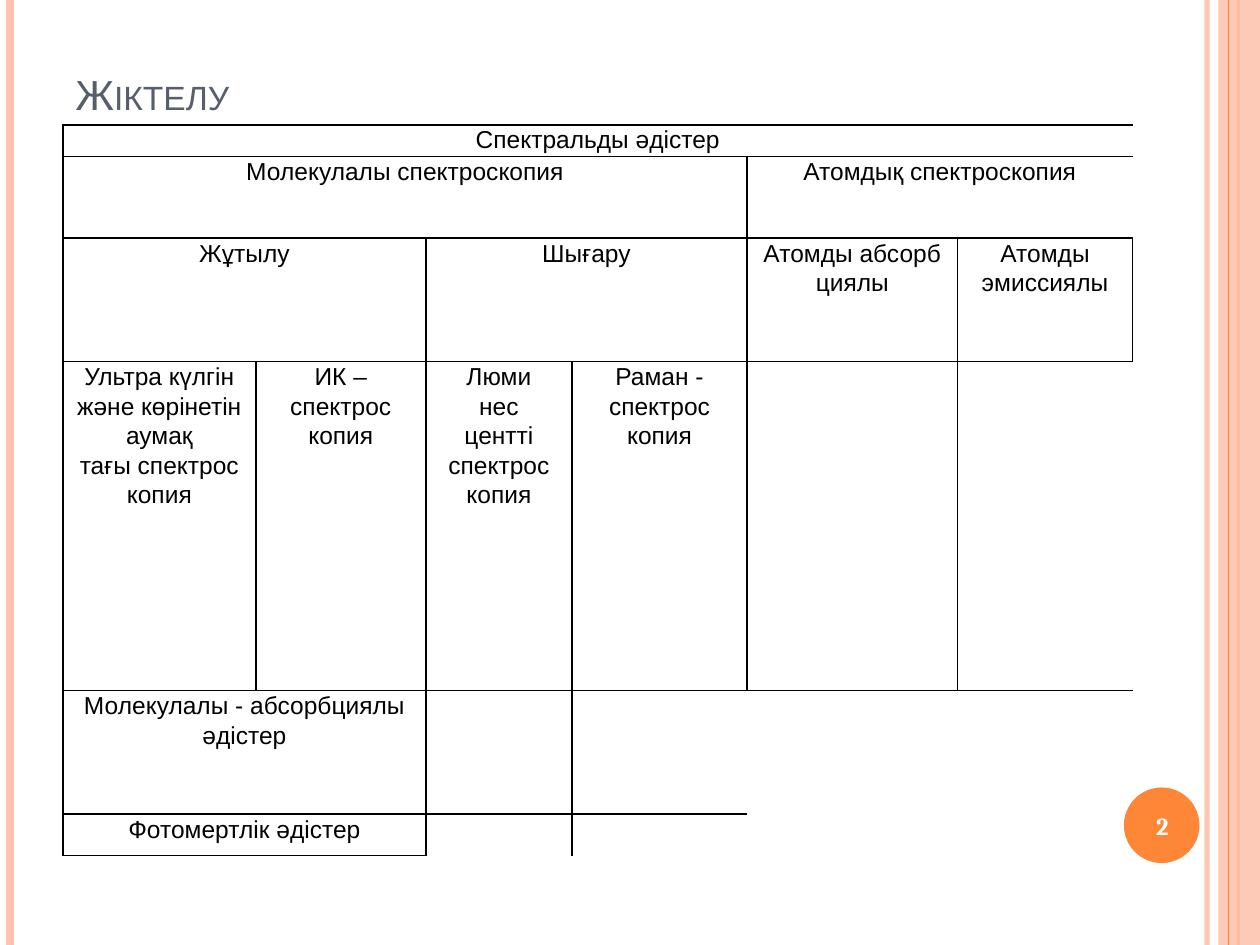
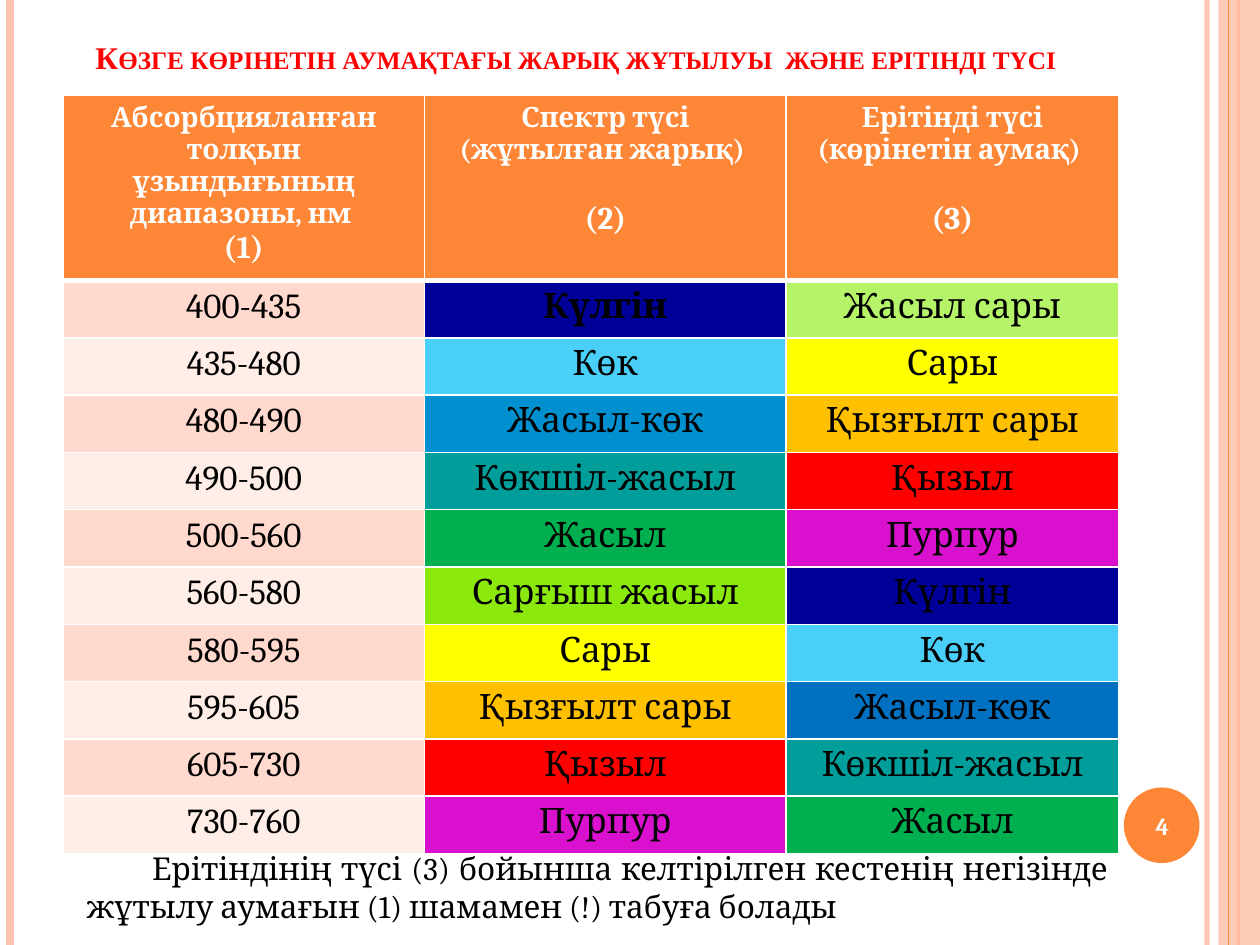
from dataclasses import dataclass
from typing import Any, NamedTuple, Optional

from lxml.etree import SubElement
from pptx import Presentation
from pptx.dml.color import RGBColor
from pptx.enum.shapes import MSO_CONNECTOR as Connector, MSO_SHAPE as Shape
from pptx.enum.text import MSO_ANCHOR as Anchor, PP_ALIGN as Align
from pptx.oxml.ns import qn
from pptx.util import Inches, Pt


# Theme
@dataclass(frozen=True)
class Theme:
    accent: str = "FE8637"
    stripe: str = "FEC3AE"
    slate: str = "575F6D"
    red: str = "FF0000"
    black: str = "000000"
    white: str = "FFFFFF"
    bands: tuple[str, str] = ("FFD9CE", "FFEDE8")
    sans: str = "Arial"
    serif: str = "Cambria"
    roman: str = "Times New Roman"
    small: int = 14
    header: int = 16
    body: int = 18
    value: int = 20
    heading: int = 24


THEME = Theme()
NO_TABLE_STYLE = "{2D5ABB26-0587-4C30-8999-92F81FD0307C}"


class Style(NamedTuple):
    font: str
    size: int
    color: str
    bold: bool = False
    small_caps: bool = False


class Box(NamedTuple):
    left: float
    top: float
    width: float
    height: float

    def lengths(self) -> list[int]:
        return [Inches(value) for value in self]


class Rule(NamedTuple):
    x: float
    color: str
    width: float
    opacity: int = 100


class Line(NamedTuple):
    text: str
    style: Style
    format: dict[str, Any] = {}


@dataclass
class Cell:
    row: int
    column: int
    lines: list[Line]
    span: int = 1
    fill: Optional[str] = None
    bottom_width: float = 1


@dataclass
class Grid:
    box: Box
    columns: list[float]
    rows: list[float]
    cells: list[Cell]
    border: str
    cell_format: dict[str, Any]


LEFT_RULES = [
    Rule(9.58, THEME.stripe, 3, 93),
    Rule(0.08, THEME.stripe, 4.5),
    Rule(9.83, THEME.accent, 1.5),
]
TOP_RULE = Rule(9.75, THEME.accent, 0.75)
NUMBER = Style(THEME.serif, THEME.small, THEME.white, bold=True)


# Drawing helpers
def set_all(target: Any, values: dict[str, Any]) -> None:
    for name, value in values.items():
        setattr(target, name, value)


def set_opacity(element: Any, percent: int) -> None:
    color = next(element.iter(qn("a:srgbClr")))
    SubElement(color, qn("a:alpha"), val=str(percent * 1000))


def write_lines(frame: Any, lines: list[Line]) -> None:
    for index, line in enumerate(lines):
        paragraph = frame.add_paragraph() if index else frame.paragraphs[0]
        set_all(paragraph, line.format)
        run = paragraph.add_run()
        run.text = line.text
        style = line.style
        set_all(run.font, {"name": style.font, "size": Pt(style.size), "bold": style.bold})
        run.font.color.rgb = RGBColor.from_string(style.color)
        if style.small_caps:
            run.font._element.set("cap", "small")


def add_text(slide: Any, box: Box, line: Line, anchor: Any = Anchor.TOP) -> Any:
    frame = slide.shapes.add_textbox(*box.lengths()).text_frame
    set_all(frame, {"word_wrap": True, "vertical_anchor": anchor})
    write_lines(frame, [line])
    return frame


def add_rule(slide: Any, rule: Rule) -> None:
    x = Inches(rule.x)
    connector = slide.shapes.add_connector(Connector.STRAIGHT, x, 0, x, Inches(7.5))
    connector.line.color.rgb = RGBColor.from_string(rule.color)
    connector.line.width = Pt(rule.width)
    properties = connector._element.spPr
    if rule.opacity < 100:
        set_opacity(properties, rule.opacity)
    SubElement(properties, qn("a:effectLst"))


def add_filled(slide: Any, kind: Any, box: Box, color: str) -> Any:
    shape = slide.shapes.add_shape(kind, *box.lengths())
    shape.shadow.inherit = False
    shape.fill.solid()
    shape.fill.fore_color.rgb = RGBColor.from_string(color)
    shape.line.fill.background()
    return shape


def add_border(cell: Any, side: str, color: str, width: float) -> None:
    properties = cell._tc.get_or_add_tcPr()
    line = SubElement(properties, qn(f"a:ln{side}"), w=str(Pt(width)))
    SubElement(SubElement(line, qn("a:solidFill")), qn("a:srgbClr"), val=color)


def add_grid(slide: Any, grid: Grid) -> None:
    frame = slide.shapes.add_table(len(grid.rows), len(grid.columns), *grid.box.lengths())
    table = frame.table
    set_all(table, {"first_row": False, "horz_banding": False})
    table._tbl.tblPr.find(qn("a:tableStyleId")).text = NO_TABLE_STYLE
    for column, width in zip(table.columns, grid.columns):
        column.width = Inches(width)
    for row, height in zip(table.rows, grid.rows):
        row.height = Inches(height)

    owners = {
        (cell.row, cell.column + offset): cell
        for cell in grid.cells
        for offset in range(cell.span)
    }
    # A border runs wherever two neighbouring places belong to different cells
    steps = {"L": (0, -1), "R": (0, 1), "T": (-1, 0), "B": (1, 0)}
    for row in range(len(grid.rows)):
        for column in range(len(grid.columns)):
            place = table.cell(row, column)
            set_all(place, grid.cell_format)
            owner = owners.get((row, column))
            for side, (down, right) in steps.items():
                if owner is not owners.get((row + down, column + right)):
                    width = owner.bottom_width if owner and side == "B" else 1
                    add_border(place, side, grid.border, width)
            if owner and owner.fill:
                place.fill.solid()
                place.fill.fore_color.rgb = RGBColor.from_string(owner.fill)
            else:
                place.fill.background()

    for cell in grid.cells:
        place = table.cell(cell.row, cell.column)
        if cell.span > 1:
            place.merge(table.cell(cell.row, cell.column + cell.span - 1))
        write_lines(place.text_frame, cell.lines)


# Side bands and number badge
def add_frame(slide: Any) -> None:
    for rule in LEFT_RULES:
        add_rule(slide, rule)
    band = add_filled(slide, Shape.RECTANGLE, Box(9.67, 0, 0.33, 7.5), THEME.stripe)
    set_opacity(band._element.spPr, 87)
    add_rule(slide, TOP_RULE)
    add_filled(slide, Shape.OVAL, Box(8.92, 6.25, 0.6, 0.6), THEME.accent)


def add_page(presentation: Any, title: str, box: Box, style: Style, grid: Grid, number: int) -> Any:
    slide = presentation.slides.add_slide(presentation.slide_layouts[6])
    add_frame(slide)
    add_text(slide, box, Line(title, style), Anchor.BOTTOM)
    add_grid(slide, grid)
    badge = Line(str(number), NUMBER, {"alignment": Align.CENTER})
    add_text(slide, Box(8.89, 6.27, 0.67, 0.57), badge, Anchor.MIDDLE)
    return slide


# Classification tree: row, column, span, lines
METHODS = [
    (0, 0, 6, ["Спектральды әдістер"]),
    (1, 0, 4, ["Молекулалы спектроскопия"]),
    (1, 4, 2, ["Атомдық спектроскопия"]),
    (2, 0, 2, ["Жұтылу"]),
    (2, 2, 2, ["Шығару"]),
    (2, 4, 1, ["Атомды абсорб", "циялы"]),
    (2, 5, 1, ["Атомды эмиссиялы"]),
    (3, 0, 1, ["Ультра күлгін және көрінетін аумақ", "тағы спектрос", "копия"]),
    (3, 1, 1, ["ИК – спектрос", "копия"]),
    (3, 2, 1, ["Люми", "нес", "центті", "спектрос", "копия"]),
    (3, 3, 1, ["Раман - спектрос", "копия"]),
    (4, 0, 2, ["Молекулалы - абсорбциялы әдістер"]),
    (5, 0, 2, ["Фотомертлік әдістер"]),
]


def methods_grid() -> Grid:
    style = Style(THEME.sans, THEME.small, THEME.black)
    centred = {"alignment": Align.CENTER, "line_spacing": 1.07}
    cells = [
        Cell(row, column, [Line(text, style, centred) for text in texts], span)
        for row, column, span, texts in METHODS
    ]
    margins = {"margin_left": Inches(0.07), "margin_right": Inches(0.07),
               "margin_top": 0, "margin_bottom": 0}
    return Grid(Box(0.5, 0.99, 8.5, 5.81), [1.53, 1.35, 1.16, 1.39, 1.67, 1.39],
                [0.25, 0.65, 0.98, 2.61, 0.98, 0.33], cells, THEME.black, margins)


# Absorbed light and solution colour: heading, mark, gap before the mark
HEADERS = [
    ("Абсорбцияланған толқын ұзындығының диапазоны, нм ", "(1)", 0),
    ("Спектр түсі (жұтылған жарық) ", "(2)", 20),
    ("Ерітінді түсі (көрінетін аумақ) ", "(3)", 20),
]
SPECTRUM = [
    ("400-435", ("Күлгін", "000099"), ("Жасыл сары", "B5F369")),
    ("435-480", ("Көк", "4ACFF8"), ("Сары", "FFFF00")),
    ("480-490", ("Жасыл-көк", "0090D0"), ("Қызғылт сары", "FFC000")),
    ("490-500", ("Көкшіл-жасыл", "009E9A"), ("Қызыл", "FF0000")),
    ("500-560", ("Жасыл", "00B050"), ("Пурпур", "D911CF")),
    ("560-580", ("Сарғыш жасыл", "8BE90D"), ("Күлгін", "000099")),
    ("580-595", ("Сары", "FFFF00"), ("Көк", "4ACFF8")),
    ("595-605", ("Қызғылт сары", "FFC000"), ("Жасыл-көк", "0070C0")),
    ("605-730", ("Қызыл", "FF0000"), ("Көкшіл-жасыл", "009E9A")),
    ("730-760", ("Пурпур", "D911CF"), ("Жасыл", "00B050")),
]


def spectrum_grid() -> Grid:
    heading = Style(THEME.serif, THEME.header, THEME.white, bold=True)
    mark = heading._replace(size=THEME.body)
    value = Style(THEME.serif, THEME.value, THEME.black)
    centred = {"alignment": Align.CENTER}
    cells = [
        Cell(0, column, [Line(text, heading, centred),
                         Line(label, mark, {**centred, "space_before": Pt(gap)})],
             fill=THEME.accent, bottom_width=3)
        for column, (text, label, gap) in enumerate(HEADERS)
    ]
    for row, (wavelength, absorbed, visible) in enumerate(SPECTRUM, start=1):
        band = THEME.bands[(row - 1) % 2]
        for column, (text, fill) in enumerate([(wavelength, band), absorbed, visible]):
            style = value._replace(bold=(row, column) == (1, 1))
            cells.append(Cell(row, column, [Line(text, style, centred)], fill=fill))
    return Grid(Box(0.5, 0.76, 8.39, 5.83), [2.87, 2.87, 2.64],
                [1.28] + [0.455] * len(SPECTRUM), cells, THEME.white, {})


def main() -> None:
    presentation = Presentation()
    set_all(presentation, {"slide_width": Inches(10), "slide_height": Inches(7.5)})

    # Classification of methods
    add_page(presentation, "Жіктелу", Box(0.5, 0.3, 8.17, 0.69),
             Style(THEME.sans, THEME.heading, THEME.slate, small_caps=True), methods_grid(), 2)

    # Colours of the visible range
    slide = add_page(
        presentation, "Көзге көрінетін аумақтағы жарық жұтылуы  және ерітінді түсі",
        Box(0.66, 0.19, 8.17, 0.46),
        Style(THEME.roman, THEME.body, THEME.red, bold=True, small_caps=True), spectrum_grid(), 4)
    note = Line("Ерітіндінің түсі (3) бойынша келтірілген кестенің негізінде жұтылу аумағын (1) "
                "шамамен (!) табуға болады",
                Style(THEME.serif, THEME.body, THEME.black), {"alignment": Align.JUSTIFY})
    frame = add_text(slide, Box(0.59, 6.69, 8.3, 0.71), note)
    frame.paragraphs[0]._p.get_or_add_pPr().set("indent", str(Inches(0.52)))

    presentation.save("out.pptx")


if __name__ == "__main__":
    main()
